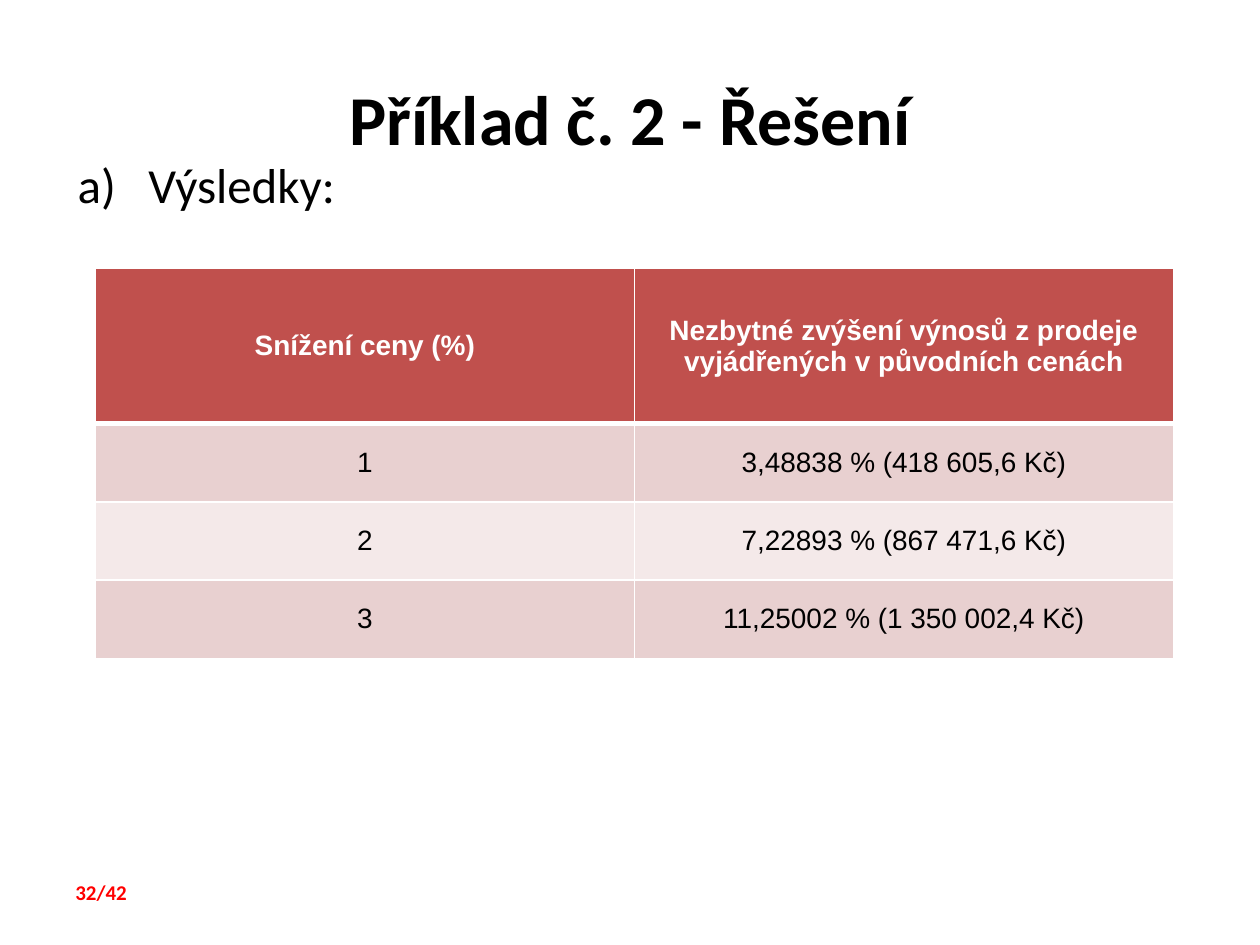
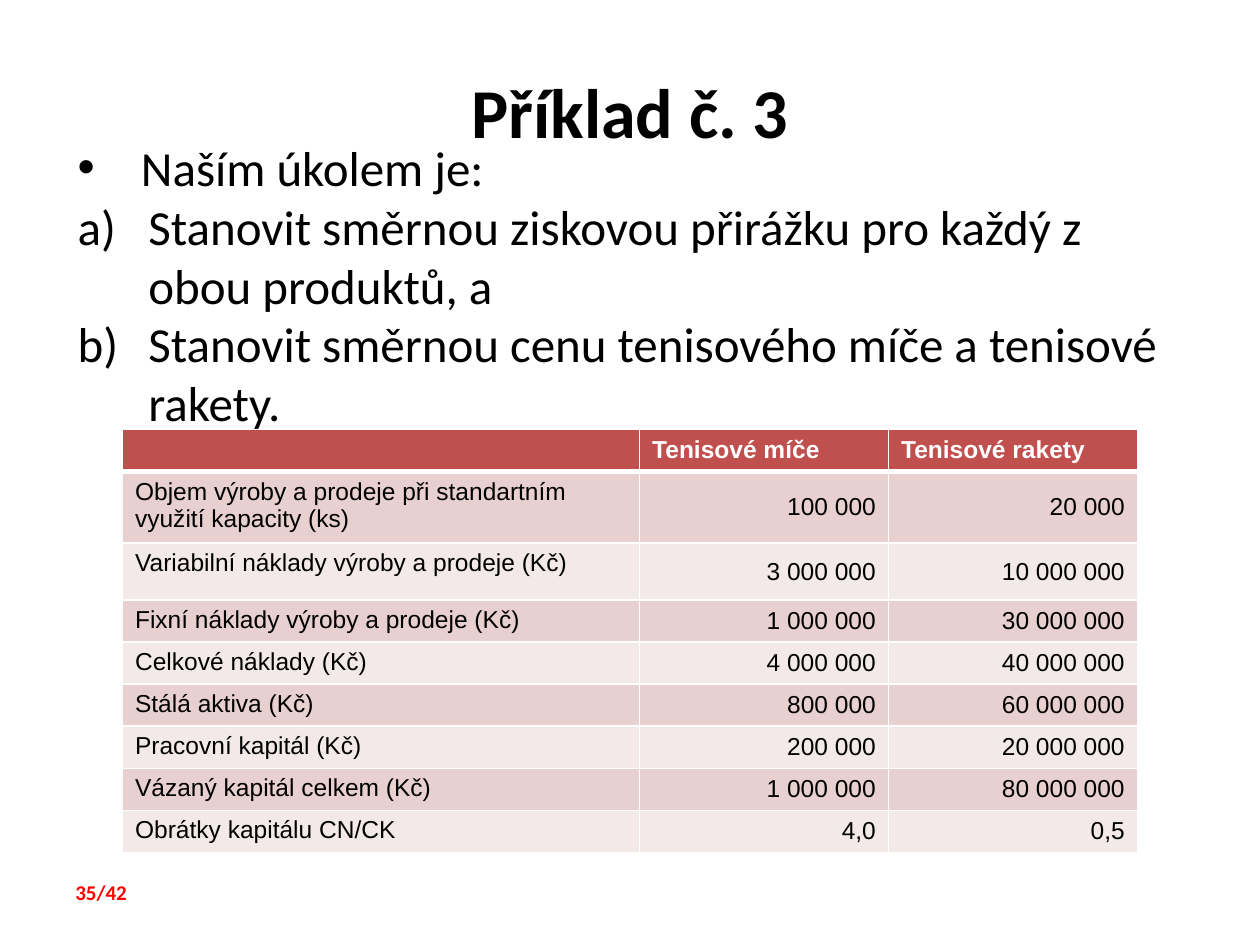
from lxml.etree import SubElement
from pptx import Presentation
from pptx.dml.color import RGBColor
from pptx.enum.text import MSO_ANCHOR as Anchor, PP_ALIGN as Align
from pptx.oxml.ns import qn
from pptx.util import Pt

COLORS = {
    "text": "000000",
    "footer": "FF0000",
    "header": "C0504D",
    "header_text": "FFFFFF",
    "border": "FFFFFF",
    "band_dark": "E8D0D0",
    "band_light": "F4E9E9",
}
LEFT, WIDTH = 36, 648
MARKER_OFFSET = 1.25
BULLET = ("buChar", {"char": "•"}, 37.5)
LETTER = ("buAutoNum", {"type": "alphaLcParenR"}, 41.75)


def color(name):
    return RGBColor.from_string(COLORS[name])


def write(para, text, *, size, font="Calibri", ink="text", bold=False,
          align=Align.LEFT, marker=None):
    para.alignment = align
    if marker:
        tag, attributes, indent = marker
        properties = para._p.get_or_add_pPr()
        properties.set("marL", str(Pt(indent)))
        properties.set("indent", str(Pt(MARKER_OFFSET - indent)))
        if tag == "buChar":
            SubElement(properties, qn("a:buFont"), typeface="Arial")
        SubElement(properties, qn(f"a:{tag}"), attributes)
    if not text:
        SubElement(para._p, qn("a:endParaRPr"), sz=str(size * 100))
        return
    span = para.add_run()
    span.text = text
    span.font.size = Pt(size)
    span.font.name = font
    span.font.bold = bold
    span.font.color.rgb = color(ink)


class Slides:
    def __init__(self):
        self.deck = Presentation()
        self.deck.slide_width, self.deck.slide_height = Pt(720), Pt(540)
        self.page = None

    def start(self, title, title_height, number):
        self.page = self.deck.slides.add_slide(self.deck.slide_layouts[6])
        self.text([(title, None)], 41, title_height, anchor=Anchor.MIDDLE,
                  size=40, bold=True, align=Align.CENTER)
        self.text([(f"{number}/42", None)], 499, 21.75, width=66,
                  size=12, bold=True, ink="footer")

    def text(self, lines, top, height, width=WIDTH, anchor=Anchor.TOP, **style):
        box = self.page.shapes.add_textbox(Pt(LEFT), Pt(top), Pt(width), Pt(height))
        frame = box.text_frame
        frame.word_wrap = True
        frame.vertical_anchor = anchor
        for index, (line, marker) in enumerate(lines):
            para = frame.add_paragraph() if index else frame.paragraphs[0]
            write(para, line, marker=marker, **style)

    def body(self, lines, top, height):
        self.text(lines, top, height, size=28)

    def borders(self, cell, row):
        widths = {"L": 1, "R": 1, "T": 3 if row == 1 else 1, "B": 1 if row else 3}
        properties = cell._tc.get_or_add_tcPr()
        for side, width in widths.items():
            line = SubElement(properties, qn(f"a:ln{side}"), w=str(Pt(width)))
            fill = SubElement(line, qn("a:solidFill"))
            SubElement(fill, qn("a:srgbClr"), val=COLORS["border"])

    def table(self, rows, left, top, widths, heights, size, layout):
        table = self.page.shapes.add_table(
            len(rows), len(widths), Pt(left), Pt(top),
            Pt(sum(widths)), Pt(sum(heights))).table
        table.horz_banding = False
        for column, width in zip(table.columns, widths):
            column.width = Pt(width)
        for row, height in zip(table.rows, heights):
            row.height = Pt(height)
        for row, values in enumerate(rows):
            band = "band_dark" if row % 2 else "band_light"
            for column, value in enumerate(values):
                cell = table.cell(row, column)
                align, cell.vertical_anchor = layout(row, column)
                self.borders(cell, row)
                cell.fill.solid()
                cell.fill.fore_color.rgb = color(band if row else "header")
                write(cell.text_frame.paragraphs[0], value, size=size, font="Arial",
                      ink="text" if row else "header_text", bold=not row, align=align)


def centered(row, column):
    return Align.CENTER, Anchor.MIDDLE


def figures_right(row, column):
    if row and column:
        return Align.RIGHT, Anchor.MIDDLE
    return Align.LEFT, Anchor.TOP


def main():
    slides = Slides()

    slides.start("Příklad č. 2 - Řešení", 52, 32)
    slides.body([("Výsledky:", LETTER)], 85, 414.5)
    price_cuts = [
        ("Snížení ceny (%)",
         "Nezbytné zvýšení výnosů z prodeje vyjádřených v původních cenách"),
        ("1", "3,48838 % (418 605,6 Kč)"),
        ("2", "7,22893 % (867 471,6 Kč)"),
        ("3", "11,25002 % (1 350 002,4 Kč)"),
    ]
    slides.table(price_cuts, 54.5, 153.5, [308, 308], [88.5] + [44.75] * 3, 16, centered)

    slides.start("Příklad č. 3", 44, 35)
    slides.body([
        ("Naším úkolem je:", BULLET),
        ("Stanovit směrnou ziskovou přirážku pro každý z obou produktů, a", LETTER),
        ("Stanovit směrnou cenu tenisového míče a tenisové rakety.", LETTER),
    ], 75, 424)
    products = [
        ("", "Tenisové míče", "Tenisové rakety"),
        ("Objem výroby a prodeje při standartním využití kapacity (ks)",
         "100 000", "20 000"),
        ("Variabilní náklady výroby a prodeje (Kč)", "3 000 000", "10 000 000"),
        ("Fixní náklady výroby a prodeje (Kč)", "1 000 000", "30 000 000"),
        ("Celkové náklady (Kč)", "4 000 000", "40 000 000"),
        ("Stálá aktiva (Kč)", "800 000", "60 000 000"),
        ("Pracovní kapitál (Kč)", "200 000", "20 000 000"),
        ("Vázaný kapitál celkem (Kč)", "1 000 000", "80 000 000"),
        ("Obrátky kapitálu CN/CK", "4,0", "0,5"),
    ]
    slides.table(products, 70, 245.5, [295.5, 142.25, 142.25],
                 [24, 40.5, 32.5] + [24] * 6, 14, figures_right)

    slides.deck.save("out.pptx")


if __name__ == "__main__":
    main()
